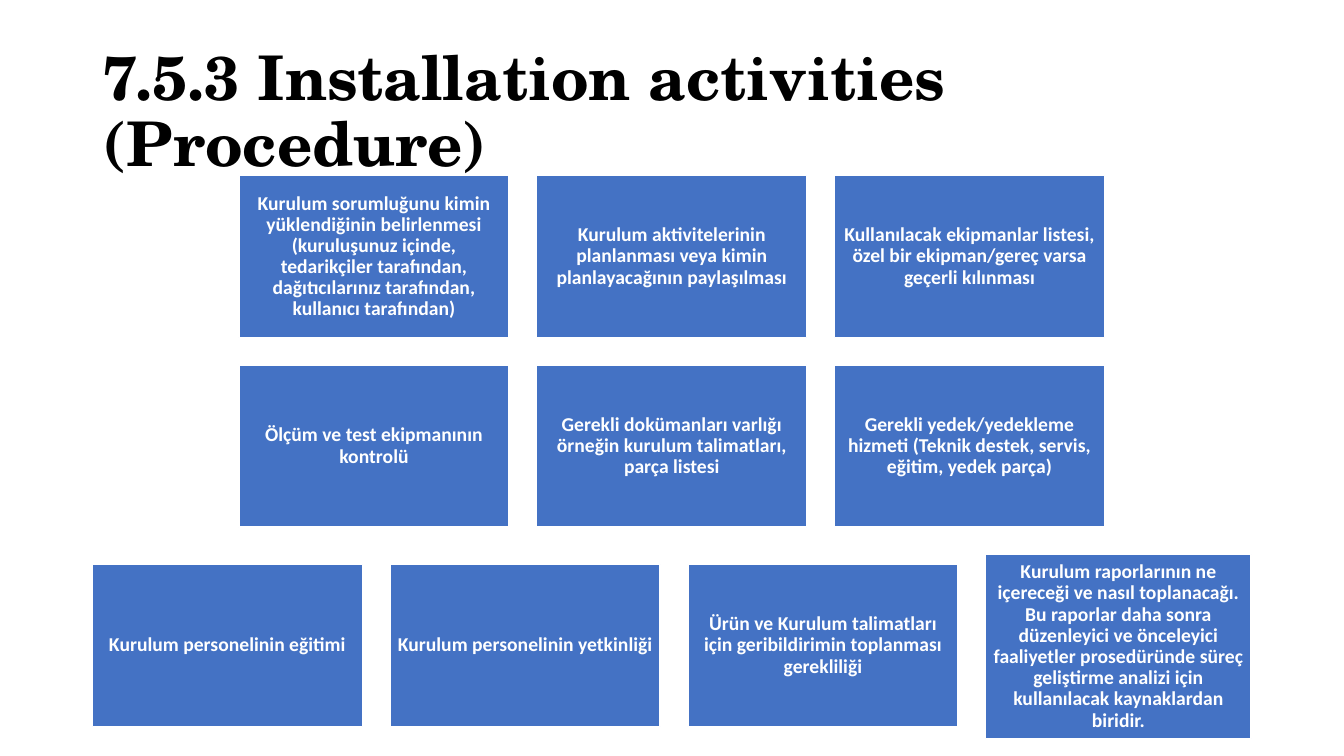
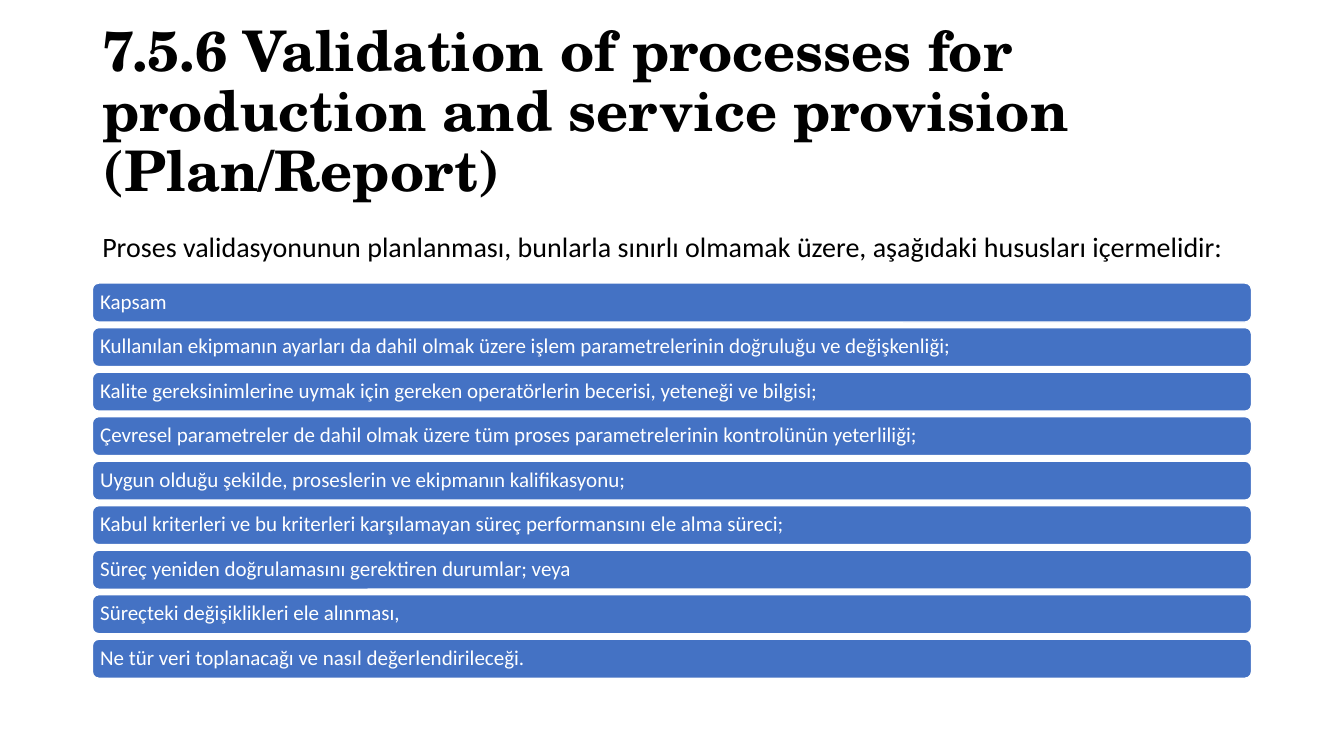
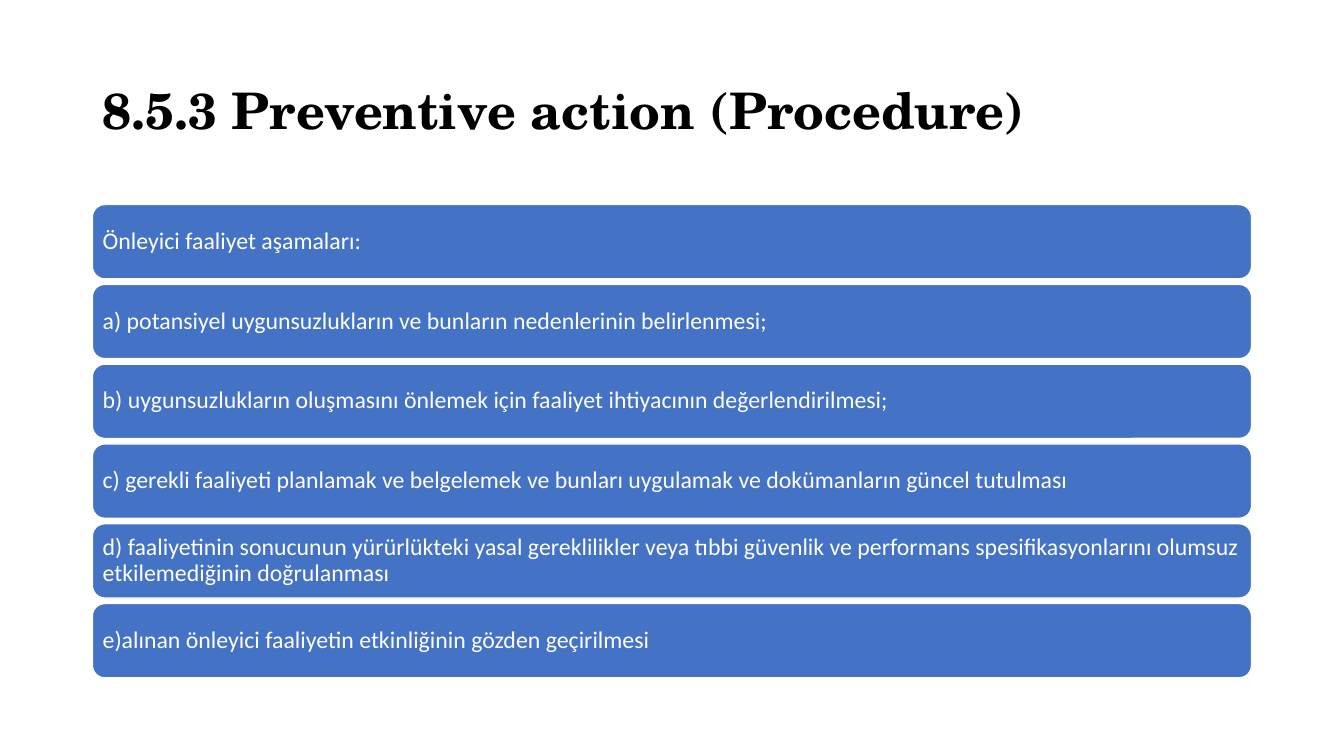
from dataclasses import dataclass

from pptx import Presentation
from pptx import util as u
from pptx.dml.color import RGBColor
from pptx.enum import shapes, text

PX = 3810  # EMU per px, 240 px to the inch
COLORS = {"ink": "000000", "panel": "4472C4", "paper": "FFFFFF"}
TITLE_FONT, BODY_FONT = "TeX Gyre Schola", "Calibri"
LEFT, CONTENT_WIDTH = 220, 2760
CARD_WIDTH, CARD_HEIGHT, CARD_PITCH = 643, 386, 709


@dataclass(frozen=True)
class Box:
    left: int
    top: int
    width: int
    height: int

    def emu(self) -> list[u.Emu]:
        return [u.Emu(n * PX) for n in (self.left, self.top, self.width, self.height)]


@dataclass(frozen=True)
class TextStyle:
    size: int
    color: str = "paper"
    font: str = BODY_FONT
    bold: bool = False
    align: text.PP_ALIGN = text.PP_ALIGN.LEFT
    spacing: float = 0.9


@dataclass(frozen=True)
class Panel:
    kind: shapes.MSO_SHAPE
    inset: int
    style: TextStyle


@dataclass(frozen=True)
class BarStack:
    top: int
    last_top: int
    height: int
    panel: Panel


@dataclass(frozen=True)
class CardRow:
    left: int
    top: int
    labels: list[str]


TITLE_BOX = Box(LEFT, 96, CONTENT_WIDTH, 348)
INTRO_BOX = Box(LEFT, 535, CONTENT_WIDTH, 106)
REPORT_BOX = Box(LEFT + 3 * CARD_PITCH, 1320, 632, 439)

CARD = Panel(shapes.MSO_SHAPE.RECTANGLE, 14,
             TextStyle(14, bold=True, align=text.PP_ALIGN.CENTER))
VALIDATION_BARS = BarStack(674, 1522, 93, Panel(
    shapes.MSO_SHAPE.ROUNDED_RECTANGLE, 14, TextStyle(15)))
PREVENTIVE_BARS = BarStack(487, 1437, 177, Panel(
    shapes.MSO_SHAPE.ROUNDED_RECTANGLE, 16, TextStyle(17)))

INSTALLATION_ROWS = [
    CardRow(569, 418, [
        "Kurulum sorumluğunu kimin yüklendiğinin belirlenmesi (kuruluşunuz içinde, "
        "tedarikçiler tarafından, dağıtıcılarınız tarafından, kullanıcı tarafından)",
        "Kurulum aktivitelerinin planlanması veya kimin planlayacağının paylaşılması",
        "Kullanılacak ekipmanlar listesi, özel bir ekipman/gereç varsa geçerli kılınması",
    ]),
    CardRow(569, 869, [
        "Ölçüm ve test ekipmanının kontrolü",
        "Gerekli dokümanları varlığı örneğin kurulum talimatları, parça listesi",
        "Gerekli yedek/yedekleme hizmeti (Teknik destek, servis, eğitim, yedek parça)",
    ]),
    CardRow(LEFT, 1344, [
        "Kurulum personelinin eğitimi",
        "Kurulum personelinin yetkinliği",
        "Ürün ve Kurulum talimatları için geribildirimin toplanması gerekliliği",
    ]),
]
REPORT_LABEL = (
    "Kurulum raporlarının ne içereceği ve nasıl toplanacağı. Bu raporlar daha sonra "
    "düzenleyici ve önceleyici faaliyetler prosedüründe süreç geliştirme analizi için "
    "kullanılacak kaynaklardan biridir."
)
VALIDATION_INTRO = (
    "Proses validasyonunun planlanması, bunlarla sınırlı olmamak üzere, "
    "aşağıdaki hususları içermelidir:"
)
VALIDATION_TOPICS = [
    "Kapsam",
    "Kullanılan ekipmanın ayarları da dahil olmak üzere işlem parametrelerinin "
    "doğruluğu ve değişkenliği;",
    "Kalite gereksinimlerine uymak için gereken operatörlerin becerisi, yeteneği ve bilgisi;",
    "Çevresel parametreler de dahil olmak üzere tüm proses parametrelerinin "
    "kontrolünün yeterliliği;",
    "Uygun olduğu şekilde, proseslerin ve ekipmanın kalifikasyonu;",
    "Kabul kriterleri ve bu kriterleri karşılamayan süreç performansını ele alma süreci;",
    "Süreç yeniden doğrulamasını gerektiren durumlar; veya",
    "Süreçteki değişiklikleri ele alınması,",
    "Ne tür veri toplanacağı ve nasıl değerlendirileceği.",
]
PREVENTIVE_STEPS = [
    "Önleyici faaliyet aşamaları:",
    "a) potansiyel uygunsuzlukların ve bunların nedenlerinin belirlenmesi;",
    "b) uygunsuzlukların oluşmasını önlemek için faaliyet ihtiyacının değerlendirilmesi;",
    "c) gerekli faaliyeti planlamak ve belgelemek ve bunları uygulamak ve "
    "dokümanların güncel tutulması",
    "d) faaliyetinin sonucunun yürürlükteki yasal gereklilikler veya tıbbi güvenlik ve "
    "performans spesifikasyonlarını olumsuz etkilemediğinin doğrulanması",
    "e)alınan önleyici faaliyetin etkinliğinin gözden geçirilmesi",
]


def rgb(name: str) -> RGBColor:
    return RGBColor.from_string(COLORS[name])


def write(frame, words: str, style: TextStyle) -> None:
    frame.text = words
    frame.word_wrap = True
    frame.auto_size = text.MSO_AUTO_SIZE.NONE
    for para in frame.paragraphs:
        para.alignment = style.align
        para.line_spacing = style.spacing
        for span in para.runs:
            span.font.name = style.font
            span.font.size = u.Pt(style.size)
            span.font.bold = style.bold
            span.font.color.rgb = rgb(style.color)


def add_page(deck, title: str, size: int):
    """Add a title-only page with the shared heading style."""
    page = deck.slides.add_slide(deck.slide_layouts[5])
    heading = page.shapes.title
    heading.left, heading.top, heading.width, heading.height = TITLE_BOX.emu()
    heading.text_frame.vertical_anchor = text.MSO_ANCHOR.MIDDLE
    write(heading.text_frame, title, TextStyle(size, "ink", TITLE_FONT, bold=True))
    return page


def add_panel(page, box: Box, words: str, panel: Panel) -> None:
    shape = page.shapes.add_shape(panel.kind, *box.emu())
    shape.shadow.inherit = False
    shape.fill.solid()
    shape.fill.fore_color.rgb = rgb("panel")
    shape.line.color.rgb = rgb("paper")
    shape.line.width = u.Pt(1)
    frame = shape.text_frame
    inset = u.Emu(panel.inset * PX)
    frame.margin_left = frame.margin_right = inset
    frame.margin_top = frame.margin_bottom = inset
    frame.vertical_anchor = text.MSO_ANCHOR.MIDDLE
    write(frame, words, panel.style)


def add_card_row(page, row: CardRow) -> None:
    for column, label in enumerate(row.labels):
        box = Box(row.left + column * CARD_PITCH, row.top, CARD_WIDTH, CARD_HEIGHT)
        add_panel(page, box, label, CARD)


def add_bars(page, stack: BarStack, labels: list[str]) -> None:
    """Spread full-width bars evenly from the first top to the last."""
    pitch = (stack.last_top - stack.top) / (len(labels) - 1)
    for index, label in enumerate(labels):
        top = stack.top + round(index * pitch)
        add_panel(page, Box(LEFT, top, CONTENT_WIDTH, stack.height), label, stack.panel)


def build_installation(deck) -> None:
    page = add_page(deck, "7.5.3 Installation activities (Procedure)", 44)
    for row in INSTALLATION_ROWS:
        add_card_row(page, row)
    add_panel(page, REPORT_BOX, REPORT_LABEL, CARD)


def build_validation(deck) -> None:
    page = add_page(
        deck,
        "7.5.6 Validation of processes for production and service provision (Plan/Report)",
        40,
    )
    add_bars(page, VALIDATION_BARS, VALIDATION_TOPICS)
    intro = page.shapes.add_textbox(*INTRO_BOX.emu())
    write(intro.text_frame, VALIDATION_INTRO, TextStyle(20, "ink", spacing=1.0))


def build_preventive(deck) -> None:
    page = add_page(deck, "8.5.3 Preventive action (Procedure)", 36)
    add_bars(page, PREVENTIVE_BARS, PREVENTIVE_STEPS)


def main() -> None:
    deck = Presentation()
    deck.slide_width, deck.slide_height = u.Emu(3200 * PX), u.Emu(1800 * PX)
    build_installation(deck)
    build_validation(deck)
    build_preventive(deck)
    deck.save("out.pptx")


if __name__ == "__main__":
    main()
